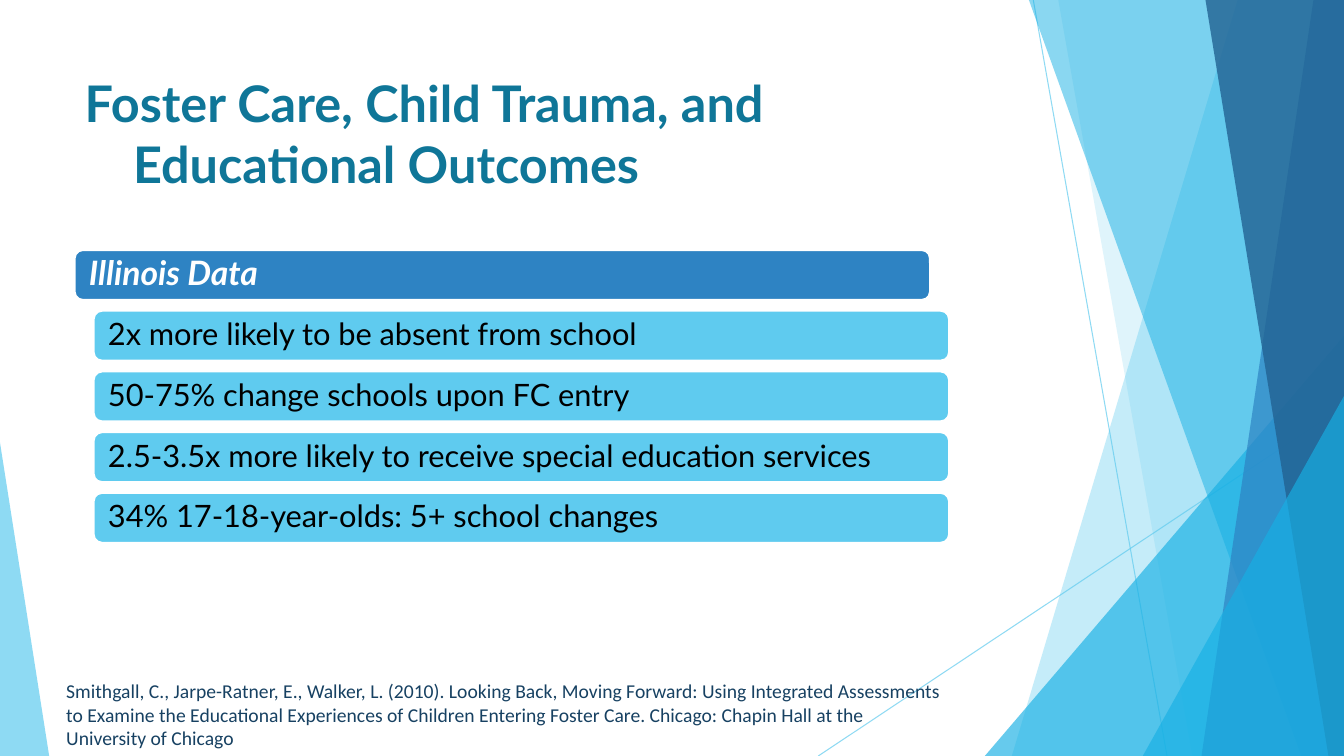
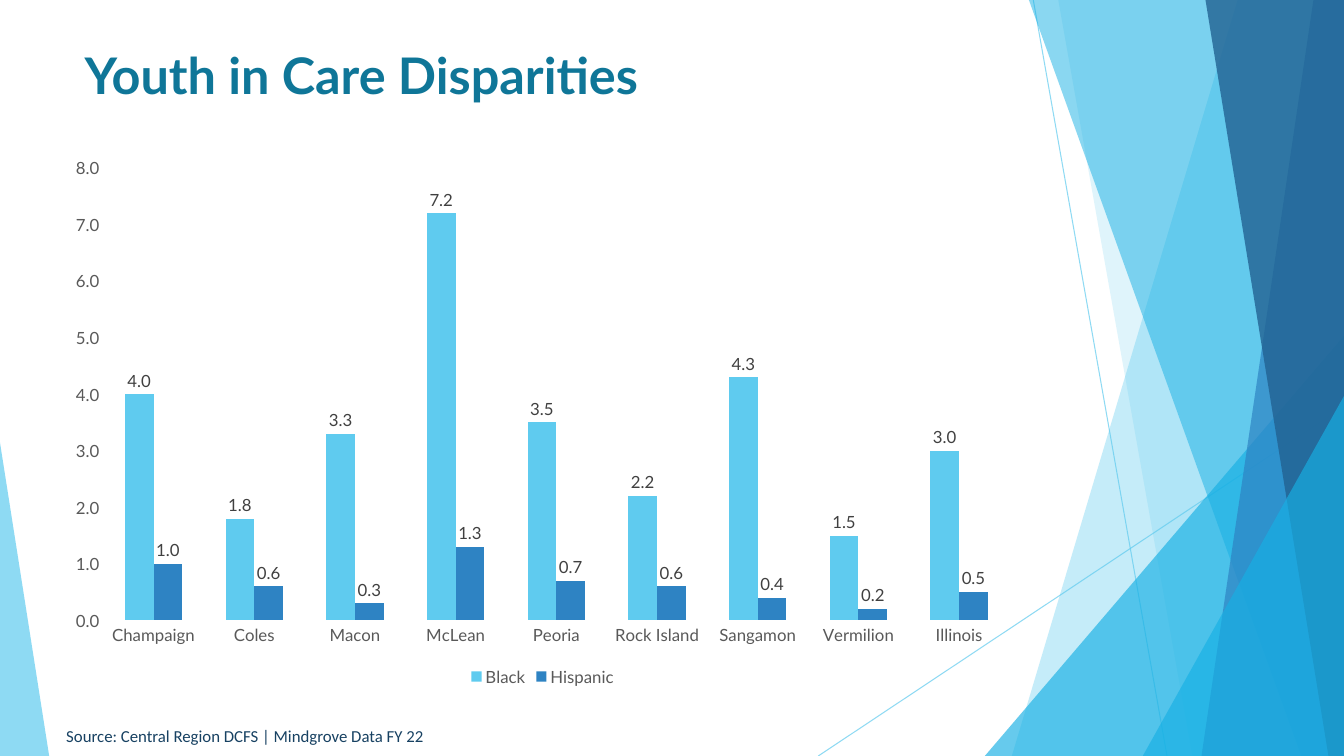
"""Builds two slides on foster care and schooling."""
from copy import deepcopy
from lxml import etree
from pptx import Presentation
from pptx import util as u
from pptx.chart import data
from pptx.dml import color
from pptx.enum import chart as ch, shapes, text
from pptx.oxml import ns

WIDE, HIGH = 33.87, 19.05
HUES = {
    "sky": "5FCBEF", "aqua": "17B0E4", "blue": "2E83C3", "navy": "226292",
    "title": "0F7698", "note": "174162", "axis": "595959", "label": "404040",
    "white": "FFFFFF", "black": "000000",
}


def hue(name):
    return color.RGBColor.from_string(HUES[name])


def box(*sizes):
    return [u.Cm(size) for size in sizes]


def fade(part, alpha):
    for tint in part.iter(ns.qn("a:srgbClr")):
        etree.SubElement(tint, ns.qn("a:alpha")).set("val", str(alpha * 1000))


def style(font, size, tint, face="Lato", bold=False, slant=False):
    font.size, font.name = u.Pt(size), face
    font.bold, font.italic = bold, slant
    font.color.rgb = hue(tint)


def write(frame, words, anchor="TOP", pad=None, space=None, hang=0, **fmt):
    frame.word_wrap = True
    frame.auto_size = text.MSO_AUTO_SIZE.NONE
    frame.vertical_anchor = text.MSO_ANCHOR[anchor]
    if pad is not None:
        frame.margin_left = frame.margin_right = u.Cm(pad)
        frame.margin_top = frame.margin_bottom = u.Cm(pad)
    para = frame.paragraphs[0]
    para.text = words
    para.alignment = text.PP_ALIGN.LEFT
    para.line_spacing = space
    if hang:
        props = para._p.get_or_add_pPr()
        props.set("marL", str(u.Cm(hang)))
        props.set("indent", str(-u.Cm(hang)))
    for run in para.runs:
        style(run.font, **fmt)
    for gap in para._p.findall(ns.qn("a:br")):
        gap.append(deepcopy(para.runs[0]._r.rPr))


class Deck:
    """Holds the style and the current slide."""

    def __init__(self):
        self.pres = Presentation()
        self.pres.slide_width, self.pres.slide_height = box(WIDE, HIGH)
        self.base = self.pres.slide_layouts[5]
        self.slide = self.group = None

    def start(self, words, top, high, **fmt):
        self.slide = self.pres.slides.add_slide(self.base)
        if self.group is None:
            self.decor()
        title = self.slide.shapes.title
        title.left, title.top, title.width, title.height = box(1.88, top, 23.88, high)
        write(title.text_frame, words, size=36, tint="title", bold=True, **fmt)

    def decor(self):
        self.group = self.slide.shapes.add_group_shape()
        self.line(26.04, 0, 29.41, HIGH)
        self.line(WIDE, 10.24, 20.62, HIGH)
        self.band(31.19, 25.5, "sky", 36)
        self.band(26.67, 30.05, "sky", 20)
        self.wedge(24.82, 9.05, 10.59, 1, "aqua", 66)
        self.band(25.93, 32.79, "aqua", 50)
        self.band(33.1, 30.28, "blue", 70)
        self.band(30.38, 33.48, "navy", 80)
        self.wedge(28.8, 5.07, 9.07, 1, "aqua", 66)
        self.wedge(0, 1.24, 7.9, 0, "sky", 70)
        tree = self.base.shapes.element
        tree.append(self.group.element)
        for num, item in enumerate(tree.iter("{*}cNvPr"), 1):
            item.set("id", str(num))

    def line(self, *ends):
        link = self.group.shapes.add_connector(shapes.MSO_CONNECTOR.STRAIGHT, *box(*ends))
        link.line.width = u.Pt(0.75)
        link.line.color.rgb = hue("sky")
        props = link.element.spPr
        fade(props, 70)
        etree.SubElement(props, ns.qn("a:effectLst"))

    def paint(self, shape, tint, alpha=None):
        shape.shadow.inherit = False
        shape.fill.solid()
        shape.fill.fore_color.rgb = hue(tint)
        if alpha:
            shape.line.fill.background()
            fade(shape.element.spPr, alpha)

    def band(self, top, foot, tint, alpha):
        pen = self.group.shapes.build_freeform(*box(top, 0))
        pen.add_line_segments([box(WIDE, 0), box(WIDE, HIGH), box(foot, HIGH)])
        self.paint(pen.convert_to_shape(), tint, alpha)

    def wedge(self, left, wide, high, peak, tint, alpha):
        shape = self.group.shapes.add_shape(
            shapes.MSO_SHAPE.ISOSCELES_TRIANGLE, *box(left, HIGH - high, wide, high))
        shape.adjustments[0] = peak
        self.paint(shape, tint, alpha)

    def bar(self, words, left, top, fill, **fmt):
        shape = self.slide.shapes.add_shape(
            shapes.MSO_SHAPE.ROUNDED_RECTANGLE, *box(left, top, 21.56, 1.26))
        self.paint(shape, fill)
        shape.line.color.rgb = hue("white")
        shape.line.width = u.Pt(1.5)
        write(shape.text_frame, words, anchor="MIDDLE", pad=0.3, space=0.9, **fmt)

    def note(self, words, top, high, size):
        area = self.slide.shapes.add_textbox(*box(1.42, top, 22.68, high))
        write(area.text_frame, words, size=size, tint="note", face="Calibri")

    def chart(self, cats, rows, tints):
        info = data.CategoryChartData(number_format="0.0")
        info.categories = cats
        for name, vals in rows.items():
            info.add_series(name, vals)
        chart = self.slide.shapes.add_chart(
            ch.XL_CHART_TYPE.COLUMN_CLUSTERED, *box(1.42, 3.71, 24.51, 13.69), info).chart
        style(chart.font, 12, "black")
        chart.has_title = False
        chart.has_legend = True
        chart.legend.position = ch.XL_LEGEND_POSITION.BOTTOM
        chart.legend.include_in_layout = False
        style(chart.legend.font, 12, "axis")
        for axis in (chart.category_axis, chart.value_axis):
            axis.has_major_gridlines = False
            axis.major_tick_mark = axis.minor_tick_mark = ch.XL_TICK_MARK.NONE
            axis.format.line.fill.background()
            style(axis.tick_labels.font, 12, "axis")
        scale = chart.value_axis
        scale.minimum_scale, scale.maximum_scale, scale.major_unit = 0, 8, 1
        scale.tick_labels.number_format = "0.0"
        scale.tick_labels.number_format_is_linked = False
        plot = chart.plots[0]
        plot.vary_by_categories = False
        plot.gap_width, plot.overlap = 150, 0
        for row, tint in zip(plot.series, tints):
            row.format.fill.solid()
            row.format.fill.fore_color.rgb = hue(tint)
            marks = row.data_labels
            marks.show_value = True
            marks.position = ch.XL_LABEL_POSITION.OUTSIDE_END
            marks.number_format = "0.0"
            marks.number_format_is_linked = False
            style(marks.font, 12, "label")


def main():
    deck = Deck()

    deck.start("Foster Care, Child Trauma, and\vEducational Outcomes", 1.7, 3.66, hang=1.22)
    top, step = 6.3, 1.53
    deck.bar("Illinois Data", 1.88, top, "blue", size=24, tint="white", bold=True, slant=True)
    facts = (
        "2x more likely to be absent from school",
        "50-75% change schools upon FC entry",
        "2.5-3.5x more likely to receive special education services",
        "34% 17-18-year-olds: 5+ school changes",
    )
    for num, fact in enumerate(facts, 1):
        deck.bar(fact, 2.36, top + num * step, "sky", size=22, tint="black")
    deck.note(
        "Smithgall, C., Jarpe-Ratner, E., Walker, L. (2010). Looking Back, Moving Forward: "
        "Using Integrated Assessments to Examine the Educational Experiences of Children "
        "Entering Foster Care. Chicago: Chapin Hall at the University of Chicago",
        16.99, 2.06, 14)

    deck.start("Youth in Care Disparities", 1.12, 1.5, anchor="MIDDLE")
    deck.chart(
        ("Champaign", "Coles", "Macon", "McLean", "Peoria", "Rock Island",
         "Sangamon", "Vermilion", "Illinois"),
        {"Black": (4, 1.8, 3.3, 7.2, 3.5, 2.2, 4.3, 1.5, 3),
         "Hispanic": (1, 0.6, 0.3, 1.3, 0.7, 0.6, 0.4, 0.2, 0.5)},
        ("sky", "blue"))
    deck.note("Source: Central Region DCFS | Mindgrove Data FY 22", 18.16, 0.76, 12)

    deck.pres.save("out.pptx")


if __name__ == "__main__":
    main()
